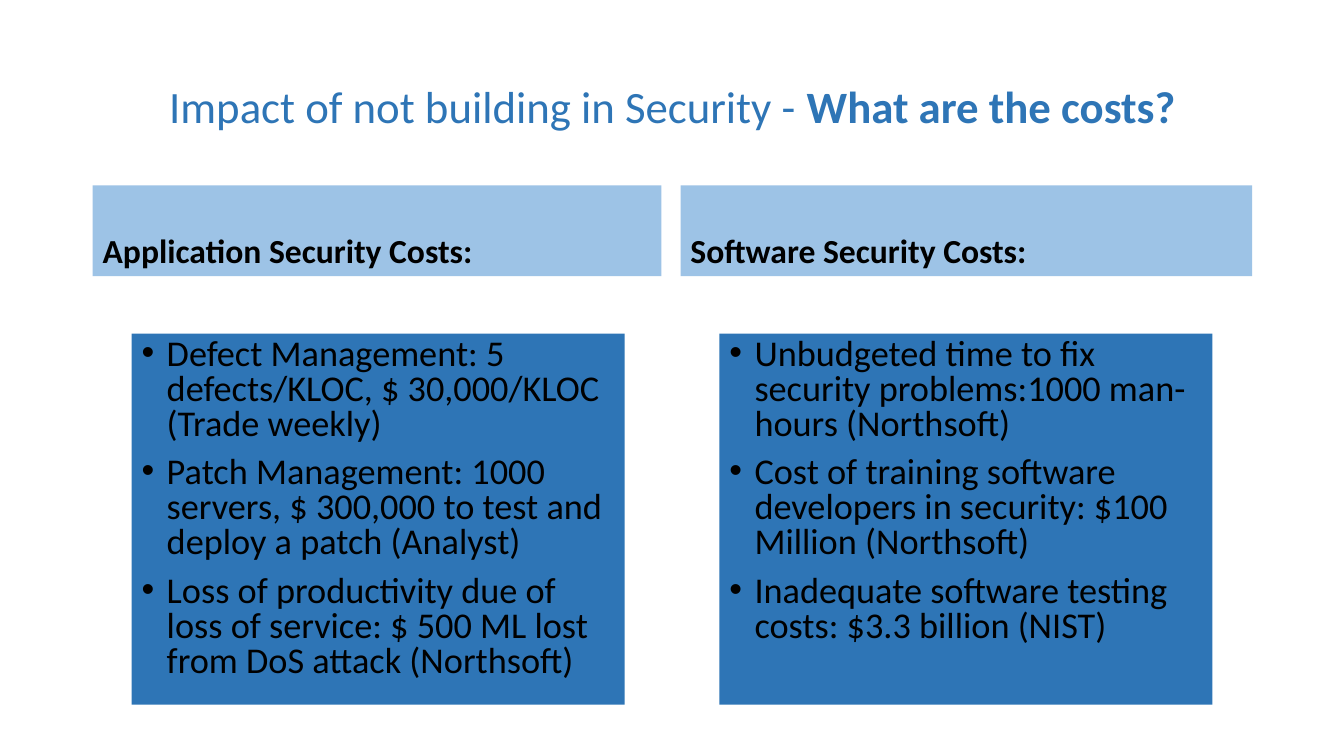
from pptx import Presentation
from pptx import util as u
from pptx.dml.color import RGBColor
from pptx.enum import shapes, text
from pptx.oxml.ns import qn
from lxml import etree

WIDTH, HEIGHT = 13.33, 7.5
FONT = "Calibri"
BLACK, BLUE, PALE_BLUE = "000000", "2E75B6", "9DC3E6"
HEADER_TOP, HEADER_HEIGHT = 1.84, 0.9
PANEL_TOP, PANEL_WIDTH, PANEL_HEIGHT = 3.31, 4.89, 3.68
PANEL_INSET = 0.385
INDENT = u.Inches(0.25)

COLUMNS = [
    (0.92, 5.64, "Application Security Costs:", [
        "Defect Management: 5 defects/KLOC, $ 30,000/KLOC (Trade weekly)",
        "Patch Management: 1000 servers, $ 300,000 to test and deploy a patch (Analyst)",
        "Loss of productivity due of loss of service: $ 500 ML lost from DoS attack (Northsoft)",
    ]),
    (6.75, 5.67, "Software Security Costs:", [
        "Unbudgeted time to fix security problems:1000 man-hours (Northsoft)",
        "Cost of training software developers in security: $100 Million (Northsoft)",
        "Inadequate software testing costs: $3.3 billion (NIST)",
    ]),
]


def colour(value):
    return RGBColor.from_string(value)


def place(box, left, top, width, height):
    box.left, box.top = u.Inches(left), u.Inches(top)
    box.width, box.height = u.Inches(width), u.Inches(height)


def add_span(para, words, size, ink, bold=False):
    span = para.add_run()
    span.text = words
    span.font.name = FONT
    span.font.size = u.Pt(size)
    span.font.bold = bold
    span.font.color.rgb = colour(ink)


def set_frame(box, anchor):
    frame = box.text_frame
    frame.word_wrap = True
    frame.auto_size = text.MSO_AUTO_SIZE.NONE
    frame.vertical_anchor = anchor
    return frame


def add_block(page, left, top, width, height, fill, anchor):
    box = page.shapes.add_shape(shapes.MSO_SHAPE.RECTANGLE, 0, 0, 0, 0)
    place(box, left, top, width, height)
    box.shadow.inherit = False
    box.fill.solid()
    box.fill.fore_color.rgb = colour(fill)
    box.line.fill.background()
    return set_frame(box, anchor)


def add_bullet(para):
    properties = para._p.get_or_add_pPr()
    properties.set("marL", str(INDENT))
    properties.set("indent", str(-INDENT))
    etree.SubElement(properties, qn("a:buFont")).set("typeface", "Arial")
    etree.SubElement(properties, qn("a:buChar")).set("char", "•")


def add_header(page, left, width, words):
    frame = add_block(page, left, HEADER_TOP, width, HEADER_HEIGHT,
                      PALE_BLUE, text.MSO_ANCHOR.BOTTOM)
    para = frame.paragraphs[0]
    para.alignment = text.PP_ALIGN.LEFT
    para.line_spacing = 0.9
    add_span(para, words, 24, BLACK, True)


def add_panel(page, left, items):
    frame = add_block(page, left, PANEL_TOP, PANEL_WIDTH, PANEL_HEIGHT,
                      BLUE, text.MSO_ANCHOR.TOP)
    for number, item in enumerate(items):
        para = frame.add_paragraph() if number else frame.paragraphs[0]
        add_bullet(para)
        para.alignment = text.PP_ALIGN.LEFT
        para.line_spacing = 0.8
        para.space_before = u.Pt(10 if number else 0)
        add_span(para, item, 25.9, BLACK)


def set_title(page):
    title = page.shapes.title
    place(title, 0.92, 0.4, 11.5, 1.36)
    para = set_frame(title, text.MSO_ANCHOR.MIDDLE).paragraphs[0]
    para.alignment = text.PP_ALIGN.CENTER
    para.line_spacing = 0.9
    add_span(para, "Impact of not building in Security - ", 32, BLUE)
    add_span(para, "What are the costs?", 32, BLUE, True)


def main():
    deck = Presentation()
    deck.slide_width, deck.slide_height = u.Inches(WIDTH), u.Inches(HEIGHT)
    page = deck.slides.add_slide(deck.slide_layouts[5])
    set_title(page)
    for left, width, heading, items in COLUMNS:
        add_header(page, left, width, heading)
        add_panel(page, left + PANEL_INSET, items)
    deck.save("out.pptx")


if __name__ == "__main__":
    main()
